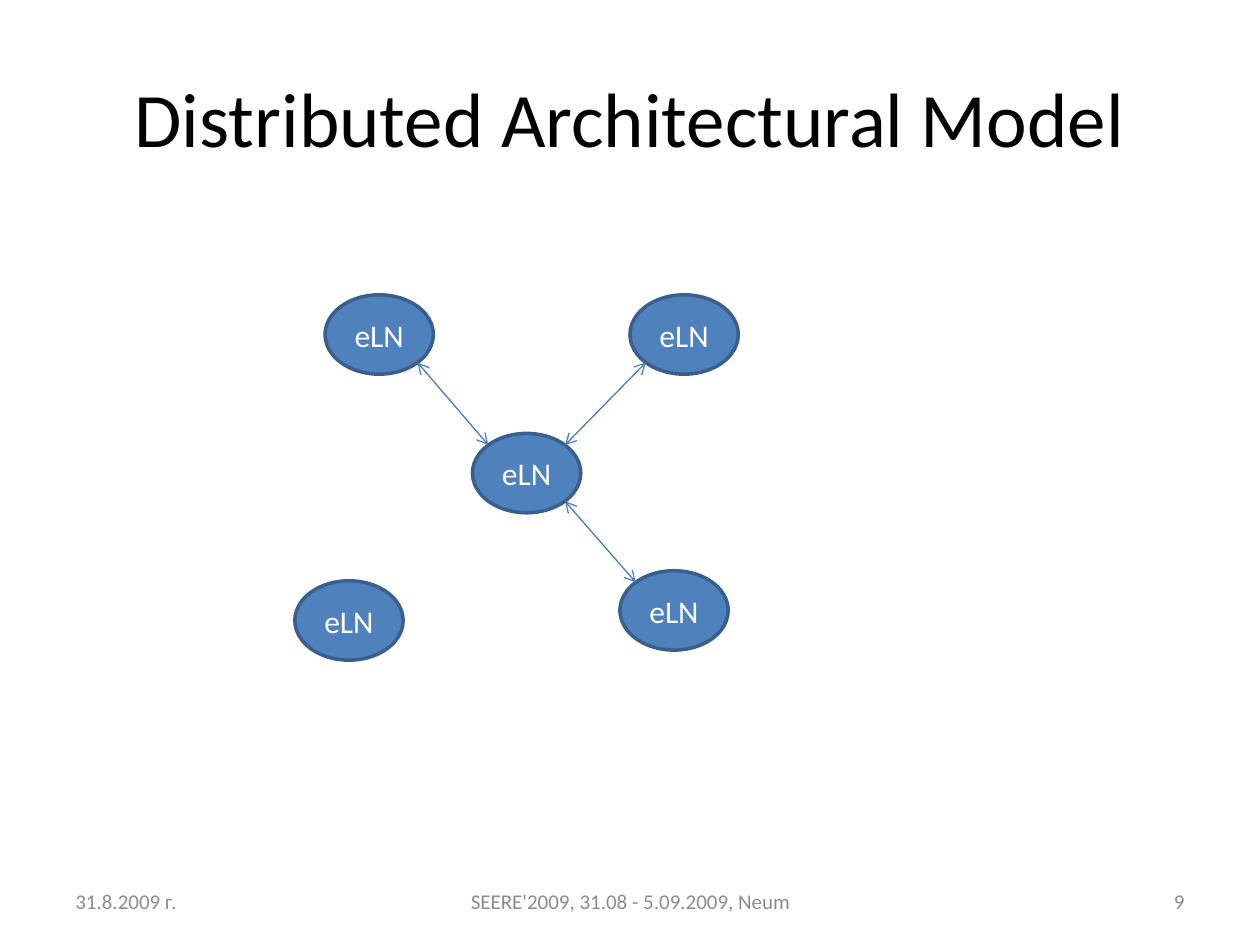
from dataclasses import dataclass
from math import copysign, sqrt

from lxml import etree
from pptx import Presentation
from pptx.dml.color import RGBColor
from pptx.enum import shapes, text
from pptx.oxml import ns
from pptx.util import Inches, Pt


@dataclass(frozen=True)
class Theme:
    """Colours, type sizes and line widths of the slide."""
    font: str = "Calibri"
    title_color: str = "000000"
    footer_color: str = "8C8C8C"
    node_fill: str = "4F81BD"
    node_line: str = "3A5F8C"
    node_text: str = "FFFFFF"
    link_color: str = "4B7EBC"
    title_size: float = 44
    node_size: float = 18
    footer_size: float = 12
    node_line_width: float = 2
    link_width: float = 0.75


THEME = Theme()
ALIGN = text.PP_ALIGN
NODE_WIDTH, NODE_HEIGHT = 0.86, 0.63
NODES = {
    "upper left": (2.58, 2.34),
    "upper right": (5, 2.34),
    "centre": (3.75, 3.44),
    "lower left": (2.34, 4.61),
    "lower right": (4.92, 4.53),
}
LINKS = [
    ("centre", "upper right"),
    ("upper left", "centre"),
    ("centre", "lower right"),
]
FOOTERS = [
    ("31.8.2009 г.", 0.5, 2.33, ALIGN.LEFT),
    ("SEERE'2009, 31.08 - 5.09.2009, Neum", 3.42, 3.17, ALIGN.CENTER),
    ("9", 7.17, 2.33, ALIGN.RIGHT),
]


def write(frame, wording, size, color, align):
    """Put one vertically centred run into a text frame."""
    frame.word_wrap = True
    frame.vertical_anchor = text.MSO_ANCHOR.MIDDLE
    paragraph = frame.paragraphs[0]
    paragraph.alignment = align
    run = paragraph.add_run()
    run.text = wording
    run.font.name = THEME.font
    run.font.size = Pt(size)
    run.font.color.rgb = RGBColor.from_string(color)


def add_label(slide, wording, box, size, color, align):
    """Add a text box at box, given as left, top, width and height."""
    label = slide.shapes.add_textbox(*map(Inches, box))
    write(label.text_frame, wording, size, color, align)


def add_node(slide, left, top):
    """Add one eLN ellipse."""
    node = slide.shapes.add_shape(
        shapes.MSO_SHAPE.OVAL, Inches(left), Inches(top),
        Inches(NODE_WIDTH), Inches(NODE_HEIGHT))
    node.shadow.inherit = False
    node.fill.solid()
    node.fill.fore_color.rgb = RGBColor.from_string(THEME.node_fill)
    node.line.color.rgb = RGBColor.from_string(THEME.node_line)
    node.line.width = Pt(THEME.node_line_width)
    write(node.text_frame, "eLN", THEME.node_size, THEME.node_text, ALIGN.CENTER)


def diagonal_site(node, other):
    """Return the diagonal point on a node's rim that faces another node."""
    reach = 1 / sqrt(8)
    return tuple(
        Inches(start + extent / 2 + copysign(extent * reach, target - start))
        for start, target, extent in zip(node, other, (NODE_WIDTH, NODE_HEIGHT)))


def add_link(slide, source, target):
    """Join two nodes with a double-headed arrow."""
    link = slide.shapes.add_connector(
        shapes.MSO_CONNECTOR.STRAIGHT,
        *diagonal_site(source, target), *diagonal_site(target, source))
    link.line.color.rgb = RGBColor.from_string(THEME.link_color)
    link.line.width = Pt(THEME.link_width)
    properties = link._element.spPr
    outline = properties.find(ns.qn("a:ln"))
    for end in ("a:headEnd", "a:tailEnd"):
        etree.SubElement(outline, ns.qn(end), type="arrow")
    etree.SubElement(properties, ns.qn("a:effectLst"))


def main():
    """Build and save the slide."""
    deck = Presentation()
    deck.slide_width, deck.slide_height = Inches(10), Inches(7.5)
    slide = deck.slides.add_slide(deck.slide_layouts[6])
    add_label(slide, "Distributed Architectural Model", (0.5, 0.3, 9, 1.25),
              THEME.title_size, THEME.title_color, ALIGN.CENTER)
    for wording, left, width, align in FOOTERS:
        add_label(slide, wording, (left, 6.95, width, 0.4),
                  THEME.footer_size, THEME.footer_color, align)
    for position in NODES.values():
        add_node(slide, *position)
    for source, target in LINKS:
        add_link(slide, NODES[source], NODES[target])
    deck.save("out.pptx")


if __name__ == "__main__":
    main()
